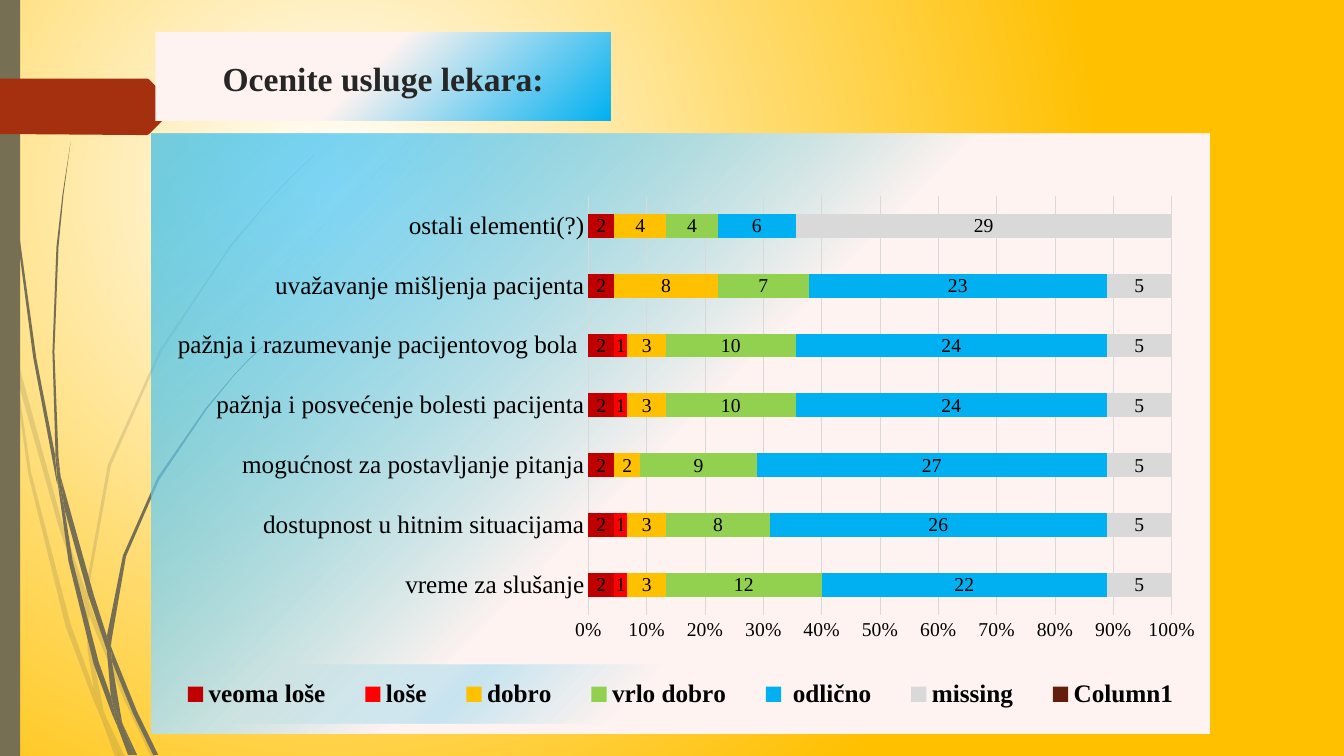
from lxml import etree
from pptx import Presentation
from pptx.chart.data import CategoryChartData
from pptx.dml.color import RGBColor
from pptx.enum.chart import (XL_CHART_TYPE, XL_LABEL_POSITION,
                             XL_LEGEND_POSITION, XL_TICK_MARK)
from pptx.enum.shapes import MSO_SHAPE
from pptx.enum.text import MSO_ANCHOR, PP_ALIGN
from pptx.oxml import parse_xml
from pptx.oxml.ns import nsdecls, qn
from pptx.util import Inches, Pt

FONT = "Times New Roman"
COLORS = {"black": "000000", "title": "262626", "grass": "766F54", "tag": "A53010",
          "white": "FFFFFF", "gold": "FFC000", "cream": "FEF3F0", "sky": "00B0F0",
          "grid": "D9D9D9"}

CATEGORIES = ["vreme za slušanje", "dostupnost u hitnim situacijama",
              "mogućnost za postavljanje pitanja",
              "pažnja i posvećenje bolesti pacijenta",
              "pažnja i razumevanje pacijentovog bola ",
              "uvažavanje mišljenja pacijenta", "ostali elementi(?)"]
SERIES = [("veoma loše", "C00000", [2] * 7),
          ("loše", "FF0000", [1, 1, None, 1, 1, None, None]),
          ("dobro", "FFC000", [3, 3, 2, 3, 3, 8, 4]),
          ("vrlo dobro", "92D050", [12, 8, 9, 10, 10, 7, 4]),
          (" odlično", "00B0F0", [22, 26, 27, 24, 24, 23, 6]),
          ("missing", "D9D9D9", [5] * 6 + [29]),
          ("Column1", "631D0A", [None] * 7)]

# Grass: outline corners of each piece of a blade, in inches
PALE_GRASS = [
    [(.11, 3.5), (.09, 3.22), (0, 2.82), (0, 2.99), (.1, 3.44)],
    [(.58, 5.22), (.84, 5.99), (.85, 5.86), (.62, 5.2), (.14, 3.45), (.17, 3.76)],
    [(.92, 6.07), (.88, 5.96), (.88, 6.1), (1.23, 6.94), (1.5, 7.51), (1.55, 7.51), (1.27, 6.92)],
    [(1.19, 7.51), (1.24, 7.51), (1.05, 7.11)],
    [(.93, 6.83), (.7, 6.19), (.31, 4.69), (.17, 3.76), (.11, 3.5), (.28, 4.7), (.65, 6.21),
     (.92, 6.93), (1.01, 7.14), (.99, 7.07)],
    [(.84, 5.99), (.87, 6.46), (.93, 6.83), (.96, 6.92), (1.05, 7.11), (1.03, 7.06),
     (.91, 6.46), (.88, 6.1), (.88, 6.08)],
    [(.88, 5.84), (1.1, 4.62), (1.6, 3.49), (2.29, 2.45), (2.68, 1.98), (2.9, 1.75),
     (3.12, 1.54), (3.12, 1.53), (2.89, 1.75), (2.68, 1.97), (2.28, 2.44), (1.58, 3.48),
     (1.07, 4.61), (.85, 5.84), (.85, 5.86), (.88, 5.96)],
    [(1.01, 7.14), (1.14, 7.51), (1.19, 7.51)],
    [(.88, 6.08), (.88, 6.1), (.88, 5.96), (.85, 5.86), (.84, 5.99)],
    [(.96, 6.92), (.93, 6.83), (.99, 7.07), (1.01, 7.14), (1.19, 7.51), (1.05, 7.11)]]
DARK_GRASS = [
    [(.07, 1.1), (.17, 2.33), (.33, 3.55), (.56, 4.77), (.57, 4.81), (.55, 4.57), (.55, 4.53),
     (.36, 3.55), (.19, 2.32), (.08, 1.09), (.05, .48), (.04, 0), (.03, 0), (.04, .48)],
    [(.88, 5.92), (1.06, 6.45), (1.06, 6.33), (1.06, 6.31), (.93, 5.9), (.6, 4.72), (.64, 5.05)],
    [(1.13, 6.49), (1.1, 6.41), (1.11, 6.56), (1.32, 7.08), (1.52, 7.49), (1.57, 7.49),
     (1.36, 7.06)],
    [(1.1, 6.91), (.98, 6.57), (.72, 5.56), (.64, 5.05), (.57, 4.77), (.68, 5.57), (.93, 6.59),
     (1.11, 7.08), (1.17, 7.22), (1.16, 7.17)],
    [(.6, 4.72), (.58, 4.53), (.54, 3.49), (.58, 2.45), (.63, 1.93), (.7, 1.41), (.62, 1.93),
     (.56, 2.45), (.52, 3.49), (.55, 4.49)],
    [(1.33, 7.49), (1.36, 7.49), (1.22, 7.19)],
    [(.57, 4.77), (.64, 5.05), (.6, 4.72), (.55, 4.49), (.55, 4.53)],
    [(1.11, 6.33), (1.25, 5.52), (1.58, 4.76), (2.05, 4.06), (2.31, 3.74), (2.45, 3.59),
     (2.61, 3.44), (2.6, 3.44), (2.45, 3.58), (2.31, 3.73), (2.04, 4.05), (1.56, 4.74),
     (1.22, 5.51), (1.06, 6.31), (1.1, 6.41)],
    [(1.17, 7.22), (1.27, 7.49), (1.31, 7.49)],
    [(1.06, 6.45), (1.1, 6.91), (1.16, 7.06), (1.22, 7.19), (1.21, 7.16), (1.11, 6.56),
     (1.09, 6.51)],
    [(1.06, 6.45), (1.09, 6.51), (1.11, 6.56), (1.1, 6.41), (1.06, 6.31), (1.06, 6.33)],
    [(1.16, 7.06), (1.1, 6.91), (1.16, 7.17), (1.17, 7.22), (1.3, 7.49), (1.33, 7.49),
     (1.22, 7.19)]]
TAG = [(1.73, 1.08), (1.48, 1.33), (1.46, 1.34), (1.36, 1.34), (0, 1.33), (0, .78),
       (1.36, .78), (1.46, .78), (1.48, .79), (1.73, 1.04), (1.74, 1.06)]


def rgb(value):
    return RGBColor.from_string(value)


def gradient(stops, direction):
    """Gradient fill from (position, colour name, opacity) stops in percent."""
    gs = "".join(
        f'<a:gs pos="{pos * 1000}"><a:srgbClr val="{COLORS[name]}">'
        f'<a:alpha val="{alpha * 1000}"/></a:srgbClr></a:gs>' for pos, name, alpha in stops)
    return parse_xml(f'<a:gradFill {nsdecls("a")} rotWithShape="1"><a:gsLst>{gs}</a:gsLst>'
                     f'{direction}</a:gradFill>')


def linear(degrees):
    return f'<a:lin ang="{degrees * 60000}" scaled="0"/>'


def set_font(font, **values):
    font.color.rgb = rgb(values.pop("color", COLORS["black"]))
    for name, value in {"name": FONT, **values}.items():
        setattr(font, name, value)


def paint(sp, color, opacity=100):
    sp.shadow.inherit = False
    sp.fill.solid()
    sp.fill.fore_color.rgb = rgb(color)
    sp.line.fill.background()
    if opacity < 100:
        clr = sp._element.spPr.find(qn("a:solidFill"))[0]
        etree.SubElement(clr, qn("a:alpha")).set("val", str(opacity * 1000))


def add_outline(s, points, color, opacity=100):
    corners = [(Inches(x), Inches(y)) for x, y in points]
    fb = s.shapes.build_freeform(*corners[0])
    fb.add_line_segments(corners[1:], close=True)
    paint(fb.convert_to_shape(), color, opacity)


def add_backdrop(s):
    s.background.fill.solid()
    bg = s._element.cSld.bg.bgPr
    bg.replace(bg.find(qn("a:solidFill")), gradient(
        [(0, "white", 100), (100, "gold", 100)],
        '<a:path path="circle"><a:fillToRect l="50000" t="50000" r="100000" b="100000"/></a:path>'))
    for pieces, opacity in ((PALE_GRASS, 20), (DARK_GRASS, 100)):
        for points in pieces:
            add_outline(s, points, COLORS["grass"], opacity)
    bar = s.shapes.add_shape(MSO_SHAPE.RECTANGLE, 0, 0, Inches(.2), Inches(7.5))
    paint(bar, COLORS["grass"])
    add_outline(s, TAG, COLORS["tag"])


def add_title(s, text):
    sp = s.shapes.title
    box = {"left": 1.54, "top": .32, "width": 4.52, "height": .88}
    for name, value in box.items():
        setattr(sp, name, Inches(value))
    sp._element.spPr.append(gradient([(46, "cream", 100), (100, "sky", 100)], linear(45)))
    tf = sp.text_frame
    tf.vertical_anchor = MSO_ANCHOR.TOP
    p = tf.paragraphs[0]
    p.alignment, p.line_spacing = PP_ALIGN.CENTER, 1.5
    r = p.add_run()
    r.text = text
    set_font(r.font, size=Pt(24), bold=True, color=COLORS["title"])
    s.shapes._spTree.append(sp._element)  # in front of the tag


def layout(x, y, w, h, inner=False):
    target = '<c:layoutTarget val="inner"/>' if inner else ""
    modes = '<c:xMode val="edge"/><c:yMode val="edge"/>'
    sizes = "".join(f'<c:{n} val="{v}"/>' for n, v in zip("xywh", (x, y, w, h)))
    return parse_xml(f'<c:layout {nsdecls("c")}><c:manualLayout>{target}{modes}{sizes}'
                     '</c:manualLayout></c:layout>')


def chart_fill(stops):
    sp_pr = parse_xml(f'<c:spPr {nsdecls("c", "a")}><a:ln><a:noFill/></a:ln></c:spPr>')
    sp_pr.insert(0, gradient(stops, linear(225)))
    return sp_pr


def place(parent, new_layout, after=None):
    for old in parent.findall(qn("c:layout")):
        parent.remove(old)
    if after is None:
        parent.insert(0, new_layout)
    else:
        parent.find(qn(after)).addnext(new_layout)


def add_ratings_chart(s):
    data = CategoryChartData()
    data.categories = CATEGORIES
    for name, _, values in SERIES:
        data.add_series(name, values)
    chart = s.shapes.add_chart(XL_CHART_TYPE.BAR_STACKED_100, Inches(1.5), Inches(1.33),
                               Inches(10.5), Inches(5.95), data).chart
    chart.has_title = False
    set_font(chart.font, size=Pt(14))
    chart._chartSpace.chart.addnext(chart_fill([(50, "cream", 100), (97, "sky", 55)]))
    # Bars and labels
    plot = chart.plots[0]
    plot.gap_width, plot.overlap = 150, 100
    for series, (_, color, _) in zip(plot.series, SERIES):
        series.format.fill.solid()
        series.format.fill.fore_color.rgb = rgb(color)
        labels = series.data_labels
        labels.show_value, labels.position = True, XL_LABEL_POSITION.CENTER
        set_font(labels.font, size=Pt(14))
    place(chart._chartSpace.chart.plotArea, layout(.413, .103, .551, .699, inner=True))
    # Axes
    cat, val = chart.category_axis, chart.value_axis
    for axis, size in ((cat, 18), (val, 14)):
        axis.major_tick_mark = axis.minor_tick_mark = XL_TICK_MARK.NONE
        set_font(axis.tick_labels.font, size=Pt(size))
    val.tick_labels.number_format = "0%"
    val.tick_labels.number_format_is_linked = False
    val.format.line.fill.background()
    for line in (cat.format.line, val.major_gridlines.format.line):
        line.color.rgb = rgb(COLORS["grid"])
        line.width = Pt(.75)
    # Legend
    chart.has_legend = True
    legend = chart.legend
    legend.position, legend.include_in_layout = XL_LEGEND_POSITION.BOTTOM, False
    set_font(legend.font, size=Pt(18), bold=True)
    el = legend._element
    place(el, layout(.005, .885, .99, .098), after="c:legendPos")
    el.find(qn("c:txPr")).addprevious(
        chart_fill([(54, "sky", 0), (70, "sky", 22), (88, "sky", 0)]))


def main():
    prs = Presentation()
    prs.slide_width, prs.slide_height = Inches(13.33), Inches(7.5)
    s = prs.slides.add_slide(prs.slide_layouts[5])
    add_backdrop(s)
    add_title(s, "Ocenite usluge lekara:")
    add_ratings_chart(s)
    prs.save("out.pptx")


if __name__ == "__main__":
    main()
